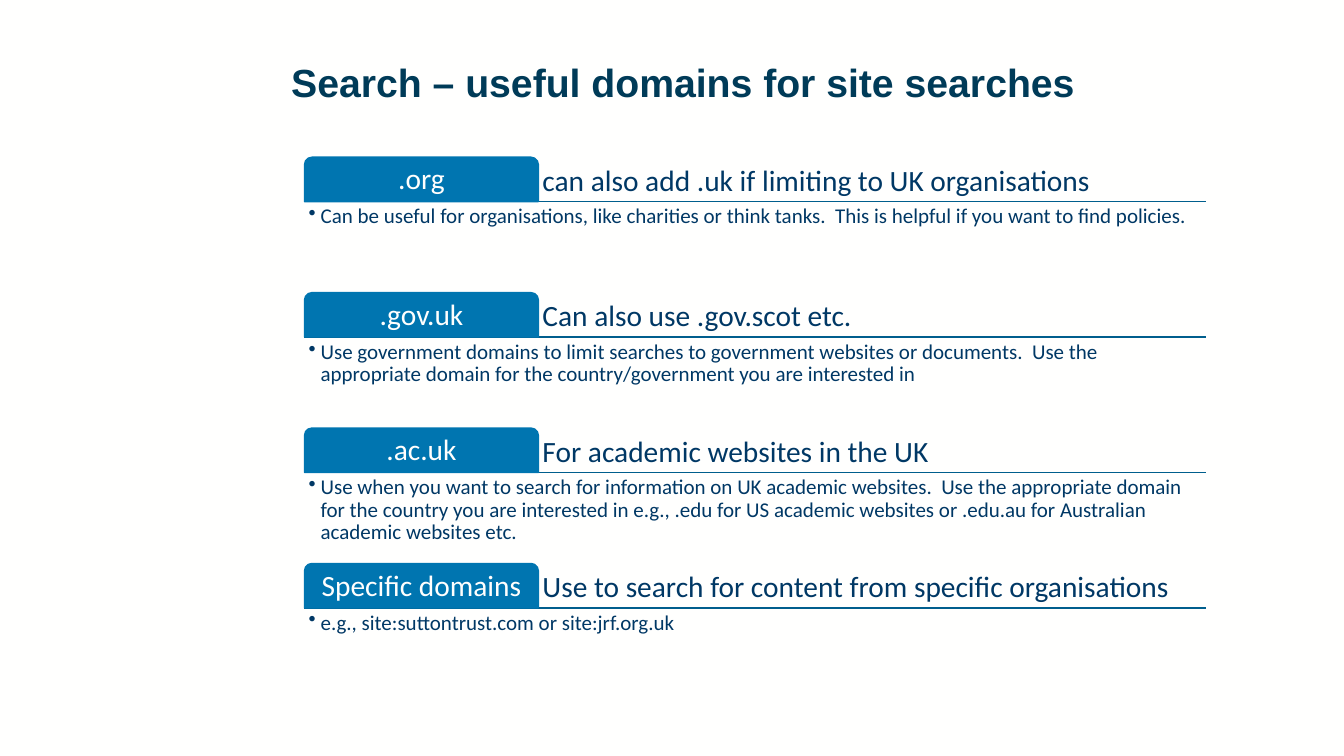
from dataclasses import dataclass
from typing import Any

import lxml.etree
import pptx
import pptx.dml.color
import pptx.enum.shapes
import pptx.enum.text
import pptx.oxml.ns
import pptx.util

Inches = pptx.util.Inches
ANCHOR = pptx.enum.text.MSO_ANCHOR
ALIGN = pptx.enum.text.PP_ALIGN
qn = pptx.oxml.ns.qn


@dataclass(frozen=True)
class Theme:
    background: str = "FFFFFE"
    heading: str = "003B58"
    body: str = "003865"
    rule: str = "005E8D"
    tab: str = "0075B0"
    tab_label: str = "FFFFFE"
    heading_font: str = "Arial"
    body_font: str = "Calibri"
    heading_size: int = 28
    summary_size: int = 21
    detail_size: int = 15
    line_width: int = 1


@dataclass(frozen=True)
class TextStyle:
    color: str
    size: int
    font: str
    bold: bool = False
    align: Any = ALIGN.LEFT
    anchor: Any = ANCHOR.TOP
    inset: float = 0.04
    bulleted: bool = False


@dataclass(frozen=True)
class Domain:
    name: str
    summary: str
    detail: str


THEME = Theme()
HEADING = TextStyle(THEME.heading, THEME.heading_size, THEME.heading_font, bold=True, inset=0.1)
TAB_LABEL = TextStyle(THEME.tab_label, THEME.summary_size, THEME.body_font,
                      align=ALIGN.CENTER, anchor=ANCHOR.MIDDLE)
SUMMARY = TextStyle(THEME.body, THEME.summary_size, THEME.body_font, anchor=ANCHOR.BOTTOM)
DETAIL = TextStyle(THEME.body, THEME.detail_size, THEME.body_font, bulleted=True)

LEFT, WIDTH = 3.02, 8.94
TAB_WIDTH, TAB_HEIGHT = 2.32, 0.44
DETAIL_HEIGHT = 0.88
FIRST_RULE, LAST_RULE = 2.0, 6.03
BULLET_INDENT = 0.12

DOMAINS = [
    Domain(".org", "can also add .uk if limiting to UK organisations",
           "Can be useful for organisations, like charities or think tanks.  "
           "This is helpful if you want to find policies."),
    Domain(".gov.uk", "Can also use .gov.scot etc.",
           "Use government domains to limit searches to government websites or documents.  "
           "Use the appropriate domain for the country/government you are interested in"),
    Domain(".ac.uk", "For academic websites in the UK",
           "Use when you want to search for information on UK academic websites.  "
           "Use the appropriate domain for the country you are interested in e.g., "
           ".edu for US academic websites or .edu.au for Australian academic websites etc."),
    Domain("Specific domains", "Use to search for content from specific organisations",
           "e.g., site:suttontrust.com or site:jrf.org.uk"),
]


def rgb(value: str) -> Any:
    return pptx.dml.color.RGBColor.from_string(value)


def apply_format(target: Any, values: dict[str, Any]) -> None:
    for name, value in values.items():
        setattr(target, name, value)


def add_bullet(paragraph: Any) -> None:
    properties = paragraph._p.get_or_add_pPr()
    properties.set("marL", str(Inches(BULLET_INDENT)))
    properties.set("indent", str(-Inches(BULLET_INDENT)))
    lxml.etree.SubElement(properties, qn("a:buChar")).set("char", "•")


def write_text(shape: Any, text: str, style: TextStyle) -> None:
    frame = shape.text_frame
    inset = Inches(style.inset)
    apply_format(frame, {
        "word_wrap": True,
        "vertical_anchor": style.anchor,
        "margin_left": inset,
        "margin_right": inset,
        "margin_top": inset / 2 if style is HEADING else inset,
        "margin_bottom": inset / 2 if style is HEADING else inset,
    })
    paragraph = frame.paragraphs[0]
    if style.bulleted:
        add_bullet(paragraph)
    apply_format(paragraph, {"alignment": style.align, "line_spacing": 0.9})
    run = paragraph.add_run()
    run.text = text
    apply_format(run.font, {
        "name": style.font,
        "size": pptx.util.Pt(style.size),
        "bold": style.bold,
    })
    run.font.color.rgb = rgb(style.color)


def add_text(slide: Any, left: float, top: float, width: float, height: float,
             text: str, style: TextStyle) -> None:
    box = slide.shapes.add_textbox(Inches(left), Inches(top), Inches(width), Inches(height))
    write_text(box, text, style)


def add_rule(slide: Any, y: float) -> None:
    rule = slide.shapes.add_connector(
        pptx.enum.shapes.MSO_CONNECTOR.STRAIGHT,
        Inches(LEFT), Inches(y), Inches(LEFT + WIDTH), Inches(y))
    rule.line.color.rgb = rgb(THEME.rule)
    rule.line.width = pptx.util.Pt(THEME.line_width)
    lxml.etree.SubElement(rule._element.spPr, qn("a:effectLst"))


def add_tab(slide: Any, top: float, label: str) -> None:
    tab = slide.shapes.add_shape(
        pptx.enum.shapes.MSO_SHAPE.ROUND_2_SAME_RECTANGLE,
        Inches(LEFT), Inches(top), Inches(TAB_WIDTH), Inches(TAB_HEIGHT))
    tab.shadow.inherit = False
    tab.fill.solid()
    tab.fill.fore_color.rgb = rgb(THEME.tab)
    tab.line.color.rgb = rgb(THEME.tab)
    tab.line.width = pptx.util.Pt(THEME.line_width)
    write_text(tab, label, TAB_LABEL)


def add_domain(slide: Any, domain: Domain, rule_y: float) -> None:
    tab_top = rule_y - TAB_HEIGHT
    add_rule(slide, rule_y)
    add_text(slide, LEFT + TAB_WIDTH, tab_top, WIDTH - TAB_WIDTH, TAB_HEIGHT,
             domain.summary, SUMMARY)
    add_tab(slide, tab_top, domain.name)
    add_text(slide, LEFT, rule_y, WIDTH, DETAIL_HEIGHT, domain.detail, DETAIL)


def main() -> None:
    deck = pptx.Presentation()
    apply_format(deck, {"slide_width": Inches(13.33), "slide_height": Inches(7.5)})
    slide = deck.slides.add_slide(deck.slide_layouts[6])
    slide.background.fill.solid()
    slide.background.fill.fore_color.rgb = rgb(THEME.background)

    add_text(slide, 2.79, 0.58, 10.07, 0.97,
             "Search – useful domains for site searches", HEADING)
    pitch = (LAST_RULE - FIRST_RULE) / (len(DOMAINS) - 1)
    for index, domain in enumerate(DOMAINS):
        add_domain(slide, domain, FIRST_RULE + index * pitch)

    deck.save("out.pptx")


if __name__ == "__main__":
    main()
